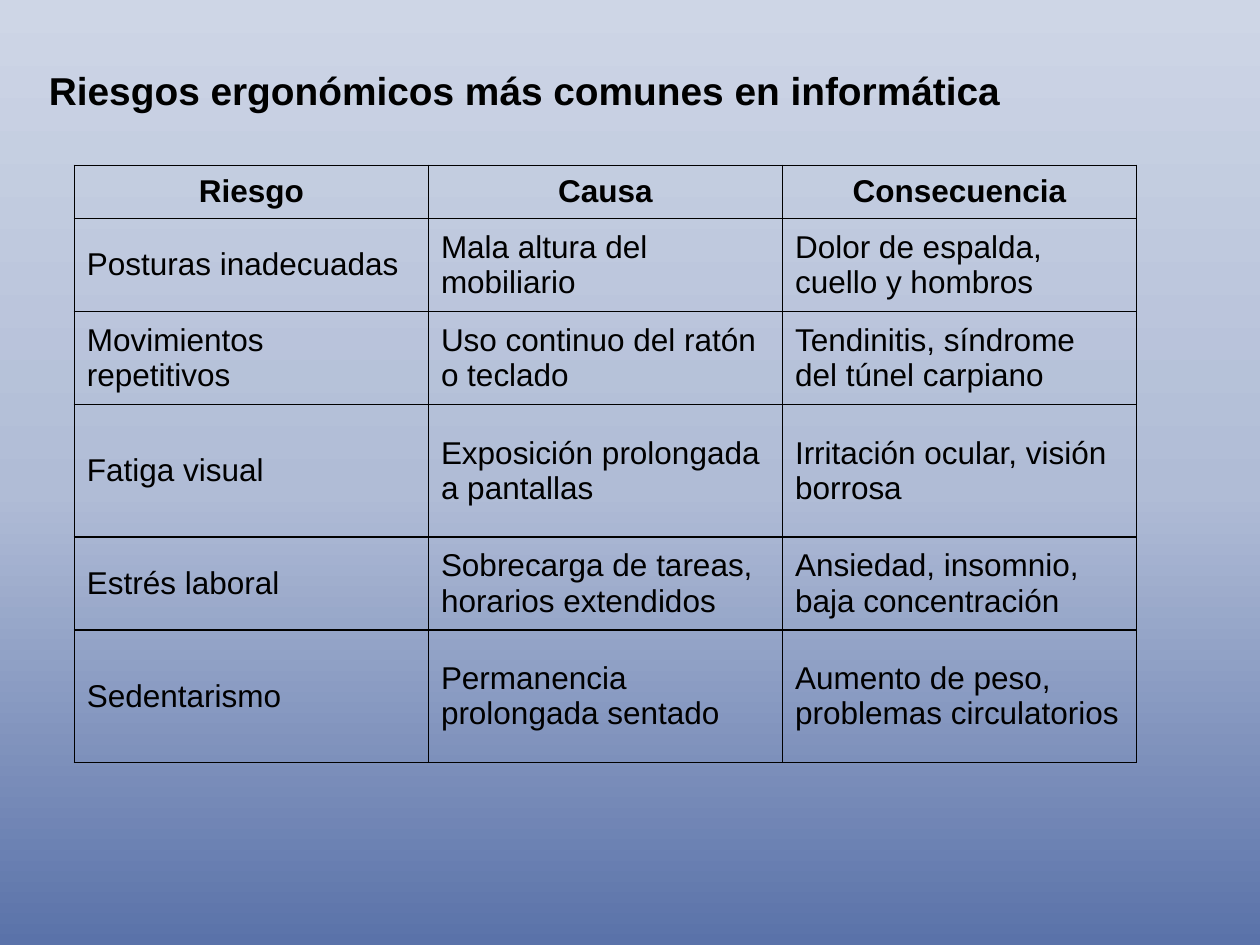
from copy import deepcopy
from lxml import etree
from pptx import Presentation
from pptx.dml.color import RGBColor
from pptx.enum.text import MSO_ANCHOR, PP_ALIGN
from pptx.oxml.ns import qn
from pptx.util import Inches, Pt

MID = MSO_ANCHOR.MIDDLE
LEFT, CENTER = PP_ALIGN.LEFT, PP_ALIGN.CENTER
WIDE, HIGH = Inches(10), Inches(7.5)
FONT = "Arial"
HUES = {"ink": "000000", "low": "5A72A9", "mid": "B0BCD6", "top": "CED6E6"}
STOPS = [("low", 0), ("mid", 0.48), ("top", 1)]
TITLE = "Riesgos ergonómicos más comunes en informática"
ROWS = [
    ("Riesgo", "Causa", "Consecuencia"),
    ("Posturas inadecuadas", "Mala altura del mobiliario",
     "Dolor de espalda, cuello y hombros"),
    ("Movimientos repetitivos", "Uso continuo del ratón o teclado",
     "Tendinitis, síndrome del túnel carpiano"),
    ("Fatiga visual", "Exposición prolongada a pantallas",
     "Irritación ocular, visión borrosa"),
    ("Estrés laboral", "Sobrecarga de tareas, horarios extendidos",
     "Ansiedad, insomnio, baja concentración"),
    ("Sedentarismo", "Permanencia prolongada sentado",
     "Aumento de peso, problemas circulatorios"),
]
TALL = [0.42, 0.74, 0.74, 1.05, 0.74, 1.05]  # row heights, shared out over the box


def share(x, y, w, h):
    """Turn shares of the slide into a box."""
    return [round(x * WIDE), round(y * HIGH), round(w * WIDE), round(h * HIGH)]


def write(frame, text, size, bold, align=LEFT):
    para = frame.paragraphs[0]
    para.alignment = align
    run = para.add_run()
    run.text = text
    font = run.font
    font.name, font.size, font.bold = FONT, Pt(size), bold
    font.color.rgb = RGBColor.from_string(HUES["ink"])


def paint(slide):
    """Vertical gradient, dark at the foot."""
    fill = slide.background.fill
    fill.gradient()
    fill.gradient_angle = 90
    stops = slide.element.find(".//" + qn("a:gsLst"))
    stops.insert(1, deepcopy(stops[0]))
    for stop, (hue, place) in zip(fill.gradient_stops, STOPS):
        stop.color.rgb = RGBColor.from_string(HUES[hue])
        stop.position = place


def rule(cell):
    """Thin line on all four sides."""
    props = cell._tc.get_or_add_tcPr()
    for spot, side in enumerate(("lnL", "lnR", "lnT", "lnB")):
        line = etree.Element(qn("a:" + side), w=str(Pt(1)))
        fill = etree.SubElement(line, qn("a:solidFill"))
        etree.SubElement(fill, qn("a:srgbClr"), val=HUES["ink"])
        props.insert(spot, line)


def head(slide, box):
    frame = slide.shapes.add_textbox(*box).text_frame
    frame.word_wrap = True
    write(frame, TITLE, 22.2, True)


def grid(slide, box):
    table = slide.shapes.add_table(len(ROWS), len(ROWS[0]), *box).table
    table.first_row = table.horz_banding = False
    for row, tall in zip(table.rows, TALL):
        row.height = round(box[3] * tall / sum(TALL))
    for r, texts in enumerate(ROWS):
        for c, text in enumerate(texts):
            cell = table.cell(r, c)
            cell.fill.background()
            cell.vertical_anchor = MID
            rule(cell)
            write(cell.text_frame, text, 18, r == 0, LEFT if r else CENTER)


def main():
    deck = Presentation()
    deck.slide_width, deck.slide_height = WIDE, HIGH
    slide = deck.slides.add_slide(deck.slide_layouts[6])
    paint(slide)
    head(slide, share(0.029, 0.064, 0.813, 0.073))
    grid(slide, share(0.059, 0.175, 0.843, 0.632))
    deck.save("out.pptx")


if __name__ == "__main__":
    main()
